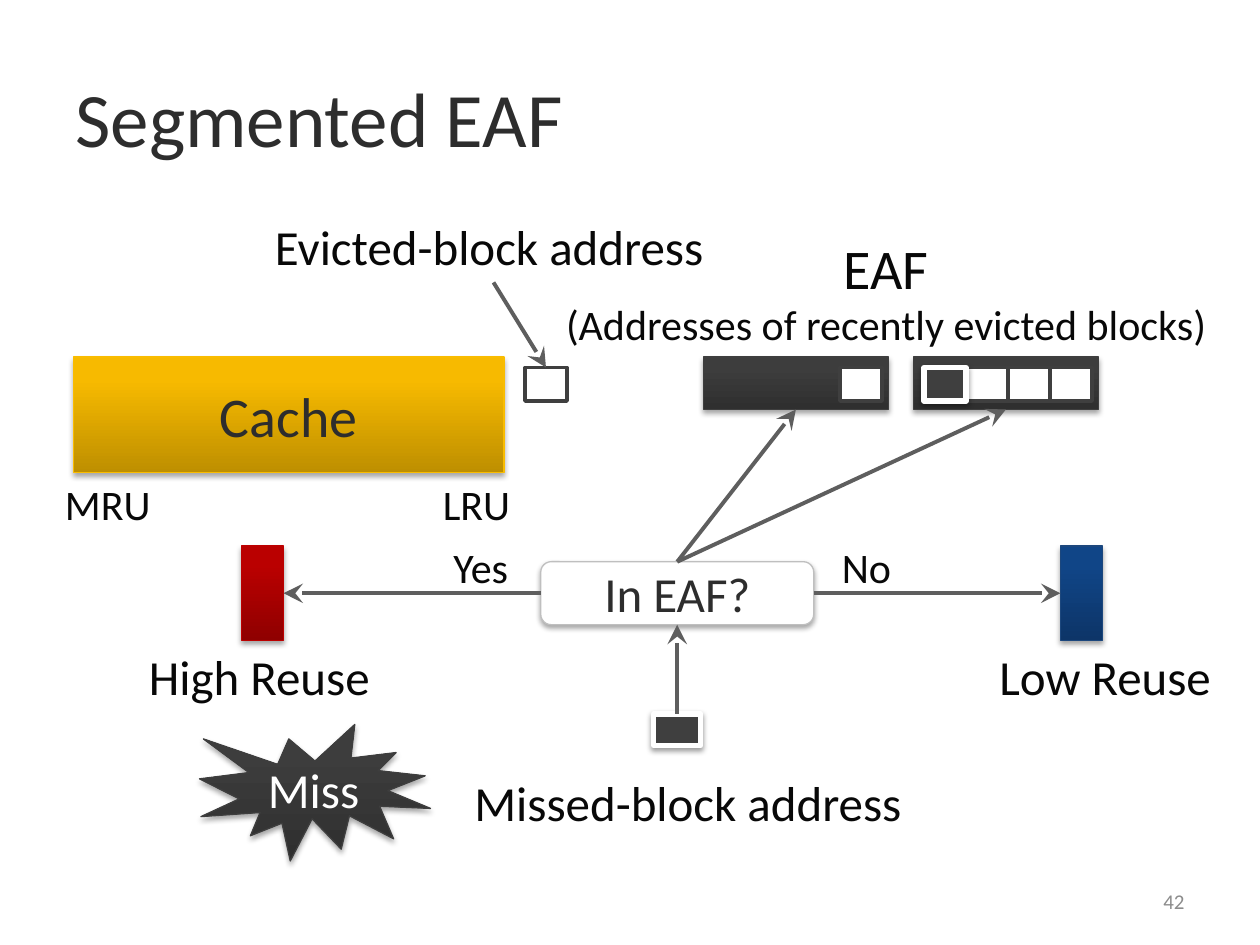
from lxml import etree
from pptx import Presentation, util as u
from pptx.dml.color import RGBColor
from pptx.enum import shapes, text
from pptx.oxml.ns import qn

CELLS_PER_INCH = 12
FONT = "Calibri"
COLORS = {"ink": "080808", "dark": "2D2D2D", "white": "FFFFFF", "arrow": "5E5E5E",
          "slot": "3F3F3F", "border": "BFBFBF", "page": "8C8C8C", "shadow": "000000"}
GRADIENTS = {"charcoal": ("2F2F2F", "3D3D3D", "3E3E3E"), "gold": ("BE8F00", "F7BA00", "F9BC00"),
             "red": ("8F0000", "BA0000", "BC0000"), "blue": ("0D3568", "104587", "1C477D")}
SHAPE, ALIGN = shapes.MSO_SHAPE, text.PP_ALIGN


def rgb(value):
    """Turn a hex string into a colour."""
    return RGBColor.from_string(value)


def cells(*values):
    """Turn grid cells into lengths."""
    return [u.Inches(value / CELLS_PER_INCH) for value in values]


def write(shape, lines, color, align=ALIGN.LEFT):
    """Fill a shape with (text, size) lines in one colour."""
    frame = shape.text_frame
    frame.text = "\n".join(line for line, _ in lines)
    for paragraph, (_, size) in zip(frame.paragraphs, lines):
        paragraph.alignment = align
        font = paragraph.runs[0].font
        font.name, font.size, font.color.rgb = FONT, u.Pt(size), rgb(COLORS[color])
    return frame


def add_label(slide, box, lines, align=ALIGN.LEFT):
    """Add an unwrapped text label."""
    frame = write(slide.shapes.add_textbox(*cells(*box)), lines, "ink", align)
    frame.word_wrap = False
    frame.auto_size = text.MSO_AUTO_SIZE.SHAPE_TO_FIT_TEXT
    return frame


def add_shadow(shape, alpha=35, distance=1.8):
    """Give a shape a soft shadow below it."""
    effects = shape._element.spPr.find(qn("a:effectLst"))
    outer = etree.SubElement(effects, qn("a:outerShdw"), blurRad=str(u.Pt(3.1)),
                             dist=str(u.Pt(distance)), dir="5400000", rotWithShape="0")
    color = etree.SubElement(outer, qn("a:srgbClr"), val=COLORS["shadow"])
    etree.SubElement(color, qn("a:alpha"), val=str(alpha * 1000))


def add_flat(slide, box, fill, line, width, kind=SHAPE.RECTANGLE):
    """Add a shape with a solid fill and no shadow."""
    shape = slide.shapes.add_shape(kind, *cells(*box))
    shape.shadow.inherit = False
    shape.fill.solid()
    shape.fill.fore_color.rgb = rgb(COLORS[fill])
    shape.line.color.rgb = rgb(COLORS[line])
    shape.line.width = u.Pt(width)
    return shape


def add_glossy(slide, box, gradient, kind=SHAPE.RECTANGLE):
    """Add a shadowed shape that darkens towards its bottom."""
    shape = add_flat(slide, box, "white", "white", 0.75, kind)
    bottom, top, edge = GRADIENTS[gradient]
    shape.fill.gradient()
    shape.fill.gradient_angle = 90
    for stop, color, position in zip(shape.fill.gradient_stops, (bottom, top), (0, 0.8)):
        stop.color.rgb, stop.position = rgb(color), position
    shape.line.color.rgb = rgb(edge)
    add_shadow(shape)
    return shape


def add_slot(slide, left, top):
    """Add an empty address slot."""
    return add_flat(slide, (left, top, 4, 3.2), "white", "slot", 2)


def add_missed_address(slide, box):
    """Add the dark, white-edged address of a missed block."""
    shape = add_flat(slide, box, "slot", "white", 3)
    add_shadow(shape, 38, 1.6)
    return shape


def add_arrow(slide, target, target_side, source=None, source_side=0, start=(0, 0)):
    """Draw an arrow to a side of a shape, from a shape or a grid point."""
    arrow = slide.shapes.add_connector(shapes.MSO_CONNECTOR.STRAIGHT, *cells(*start, *start))
    if source is not None:
        arrow.begin_connect(source, source_side)
    arrow.end_connect(target, target_side)
    arrow.line.color.rgb = rgb(COLORS["arrow"])
    arrow.line.width = u.Pt(2.25)
    etree.SubElement(arrow.line._get_or_add_ln(), qn("a:tailEnd"), type="stealth", w="lg", len="lg")
    etree.SubElement(arrow._element.spPr, qn("a:effectLst"))


def add_cache(slide, box):
    """Draw the cache with its two ends named below."""
    left, top, width, height = box
    cache = add_glossy(slide, box, "gold")
    write(cache, [("Cache", 32)], "dark", ALIGN.CENTER)
    add_label(slide, (left - 2, top + height, 10.7, 6), [("MRU", 24)])
    add_label(slide, (left + width - 7, top + height, 8.9, 6), [("LRU", 24)])


def add_evicted(slide, box):
    """Draw the evicted-block label and its slot."""
    left, top, _, height = box
    add_label(slide, box, [("Evicted-block address", 28)])
    slot = add_slot(slide, left + 25, top + 15)
    add_arrow(slide, slot, 0, start=(left + 22, top + height))


def add_segment(slide, box, filled, missed=()):
    """Draw one filter segment with addresses in some of its four slots."""
    left, top, _, _ = box
    segment = add_glossy(slide, box, "charcoal")
    for index in filled:
        add_slot(slide, left + 1 + 4 * index, top + 1)
    for index in missed:
        add_missed_address(slide, (left + 1 + 4 * index, top + 1, 4, 3.2))
    return segment


def add_filter(slide, box):
    """Draw the filter heading over its two segments."""
    left, top, width, height = box
    heading = [("EAF", 32), ("(Addresses of recently evicted blocks)", 24)]
    frame = add_label(slide, (left, top, width, height), heading, ALIGN.CENTER)
    frame.paragraphs[0].line_spacing = 0.7
    row = top + height
    return [add_segment(slide, (left + 14.6, row, 17.6, 5), [3]),
            add_segment(slide, (left + 34.6, row, 17.6, 5), [1, 2, 3], [0])]


def add_outcome(slide, box, gradient, label, label_box):
    """Draw a block with its reuse label below."""
    left, top, _, height = box
    offset, width = label_box
    block = add_glossy(slide, box, gradient)
    add_label(slide, (left + offset, top + height, width, 6.9), [(label, 28)])
    return block


def add_test(slide, box, segments):
    """Draw the membership test, its input and both outcomes."""
    left, top, width, height = box
    test = add_flat(slide, box, "white", "border", 0.75, SHAPE.ROUNDED_RECTANGLE)
    add_shadow(test)
    write(test, [("In EAF?", 28)], "dark", ALIGN.CENTER)
    high = add_outcome(slide, (left - 28.5, top - 1.5, 4, 9), "red", "High Reuse", (-10, 24.7))
    low = add_outcome(slide, (left + 49.5, top - 1.5, 4, 9), "blue", "Low Reuse", (-7, 23.9))
    missed = add_missed_address(slide, (left + width / 2 - 2.25, top + 14.5, 4.5, 3))
    add_label(slide, (left - 7.5, top + 19.5, 43.6, 6.9), [("Missed-block address", 28)])
    add_label(slide, (left - 9.5, top - 2.5, 7.7, 6), [("Yes", 24)])
    add_label(slide, (left + width + 1.5, top - 2.5, 7.2, 6), [("No", 24)])
    add_arrow(slide, test, 2, missed, 0)
    add_arrow(slide, high, 3, test, 1)
    add_arrow(slide, low, 1, test, 3)
    for segment in segments:
        add_arrow(slide, segment, 2, test, 0)


def add_miss(slide, box):
    """Draw the burst that announces a miss."""
    burst = add_glossy(slide, box, "charcoal", SHAPE.EXPLOSION1)
    frame = write(burst, [("Miss", 28)], "white", ALIGN.CENTER)
    frame.word_wrap = False


def add_frame(slide, title_box, number_box):
    """Set the title and the page number."""
    title = slide.shapes.title
    title.left, title.top, title.width, title.height = cells(*title_box)
    write(title, [("Segmented EAF", 44)], "dark")
    number = slide.shapes.add_textbox(*cells(*number_box))
    frame = write(number, [("42", 12)], "page", ALIGN.RIGHT)
    frame.word_wrap = True
    frame.vertical_anchor = text.MSO_ANCHOR.MIDDLE


def main():
    """Build the slide and save it."""
    presentation = Presentation()
    presentation.slide_width, presentation.slide_height = u.Inches(10), u.Inches(7.5)
    slide = presentation.slides.add_slide(presentation.slide_layouts[5])
    add_frame(slide, (6, 3.6, 108, 15), (86, 83.4, 28, 4.8))
    add_cache(slide, (7, 34, 41, 11))
    segments = add_filter(slide, (52.4, 23.4, 64, 10.6))
    add_evicted(slide, (25, 20, 44, 6.9))
    add_test(slide, (51.5, 53.5, 26, 6), segments)
    add_miss(slide, (19, 69, 22, 13))
    presentation.save("out.pptx")


if __name__ == "__main__":
    main()
